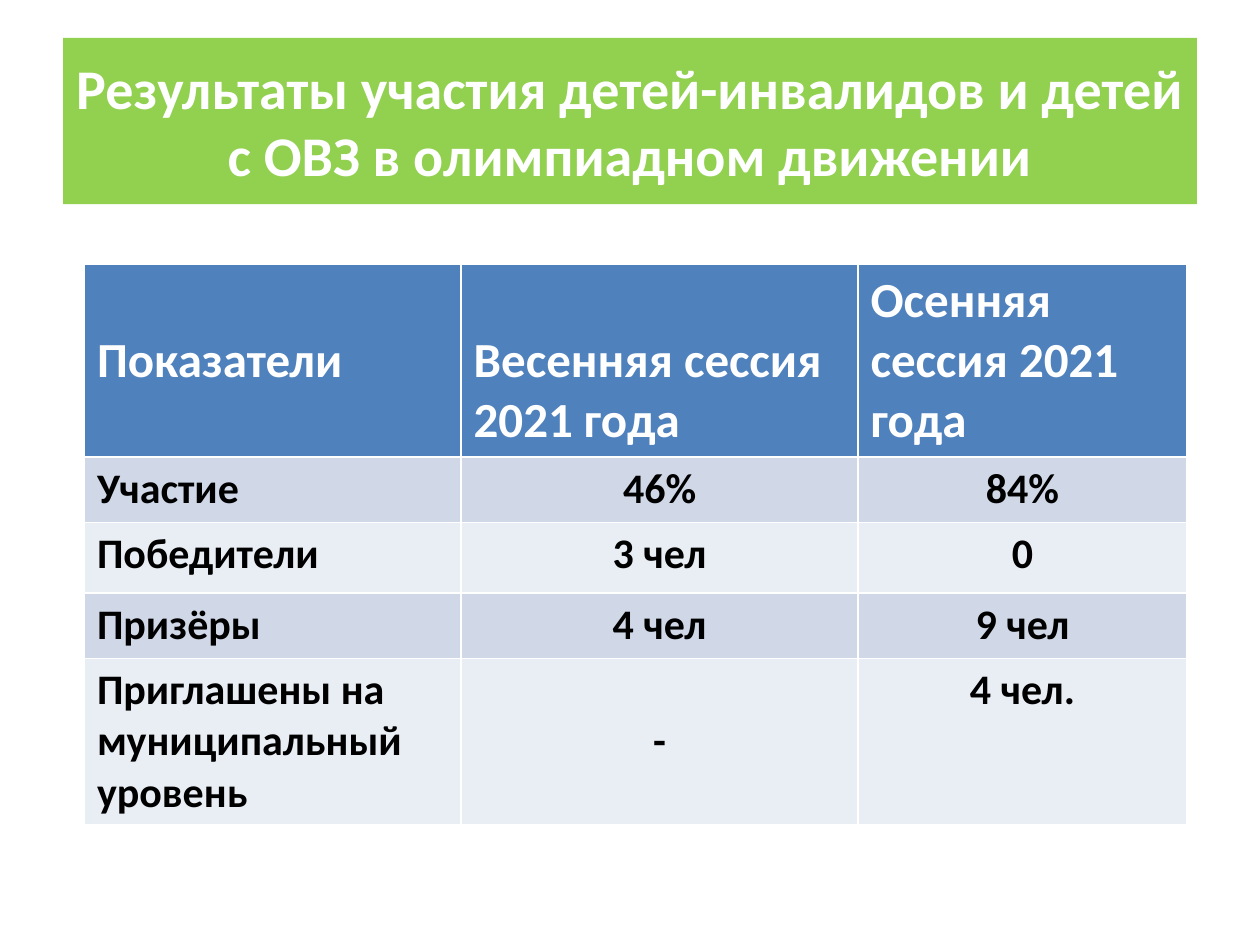
from pptx import Presentation
from pptx.dml.color import RGBColor
from pptx.enum.text import MSO_ANCHOR, PP_ALIGN
from pptx.util import Inches, Pt

LEFT, CENTER = PP_ALIGN.LEFT, PP_ALIGN.CENTER
TOP, MIDDLE, BOTTOM = MSO_ANCHOR.TOP, MSO_ANCHOR.MIDDLE, MSO_ANCHOR.BOTTOM
TITLE_ONLY = 5

TITLE = "Результаты участия детей-инвалидов и детей с ОВЗ в олимпиадном движении"
ROWS = [
    ("Показатели", "Весенняя сессия 2021 года", "Осенняя сессия 2021 года"),
    ("Участие", "46%", "84%"),
    ("Победители", "3 чел", "0"),
    ("Призёры", "4 чел", "9 чел"),
    ("Приглашены на муниципальный уровень", "-", "4 чел."),
]
COLUMN_WIDTHS = (2.99, 3.15, 2.61)
ROW_HEIGHTS = (1.52, 0.52, 0.56, 0.52, 1.32)
TITLE_BOX = {"left": 0.5, "top": 0.3, "width": 9, "height": 1.32}
TABLE_LEFT, TABLE_TOP = 0.67, 2.1
# Cells that are not anchored at the top, by (row, column)
ANCHORS = {(0, 0): MIDDLE, (0, 1): BOTTOM, (4, 1): MIDDLE}

THEME = {
    "title_fill": "92D050",
    "header_fill": "4F81BD",
    "bands": ("D0D8E8", "E9EDF4"),
    "title": {"name": "Calibri", "size": Pt(32), "bold": True, "color": "FFFFFF"},
    "header": {"name": "Calibri", "size": Pt(28), "bold": True, "color": "FFFFFF"},
    "body": {"name": "Calibri", "size": Pt(24), "bold": True, "color": "000000"},
}


def set_fill(item, color):
    item.fill.solid()
    item.fill.fore_color.rgb = RGBColor.from_string(color)


def write_text(text_frame, text, style, alignment):
    paragraph = text_frame.paragraphs[0]
    paragraph.alignment = alignment
    run = paragraph.add_run()
    run.text = text
    for attribute, value in THEME[style].items():
        if attribute == "color":
            run.font.color.rgb = RGBColor.from_string(value)
        else:
            setattr(run.font, attribute, value)


def add_title(slide):
    title = slide.shapes.title
    for attribute, value in TITLE_BOX.items():
        setattr(title, attribute, Inches(value))
    set_fill(title, THEME["title_fill"])
    title.text_frame.vertical_anchor = MIDDLE
    write_text(title.text_frame, TITLE, "title", CENTER)


def add_results_table(slide):
    table = slide.shapes.add_table(
        len(ROWS), len(COLUMN_WIDTHS), Inches(TABLE_LEFT), Inches(TABLE_TOP),
        Inches(sum(COLUMN_WIDTHS)), Inches(sum(ROW_HEIGHTS)),
    ).table
    for column, width in zip(table.columns, COLUMN_WIDTHS):
        column.width = Inches(width)
    for row, height in zip(table.rows, ROW_HEIGHTS):
        row.height = Inches(height)
    for row_index, texts in enumerate(ROWS):
        is_header = row_index == 0
        fill = THEME["header_fill"] if is_header else THEME["bands"][(row_index - 1) % 2]
        for column_index, text in enumerate(texts):
            cell = table.cell(row_index, column_index)
            set_fill(cell, fill)
            cell.vertical_anchor = ANCHORS.get((row_index, column_index), TOP)
            alignment = LEFT if is_header or column_index == 0 else CENTER
            write_text(cell.text_frame, text, "header" if is_header else "body", alignment)


def main():
    presentation = Presentation()
    presentation.slide_width, presentation.slide_height = Inches(10), Inches(7.5)
    slide = presentation.slides.add_slide(presentation.slide_layouts[TITLE_ONLY])
    add_title(slide)
    add_results_table(slide)
    presentation.save("out.pptx")


if __name__ == "__main__":
    main()
